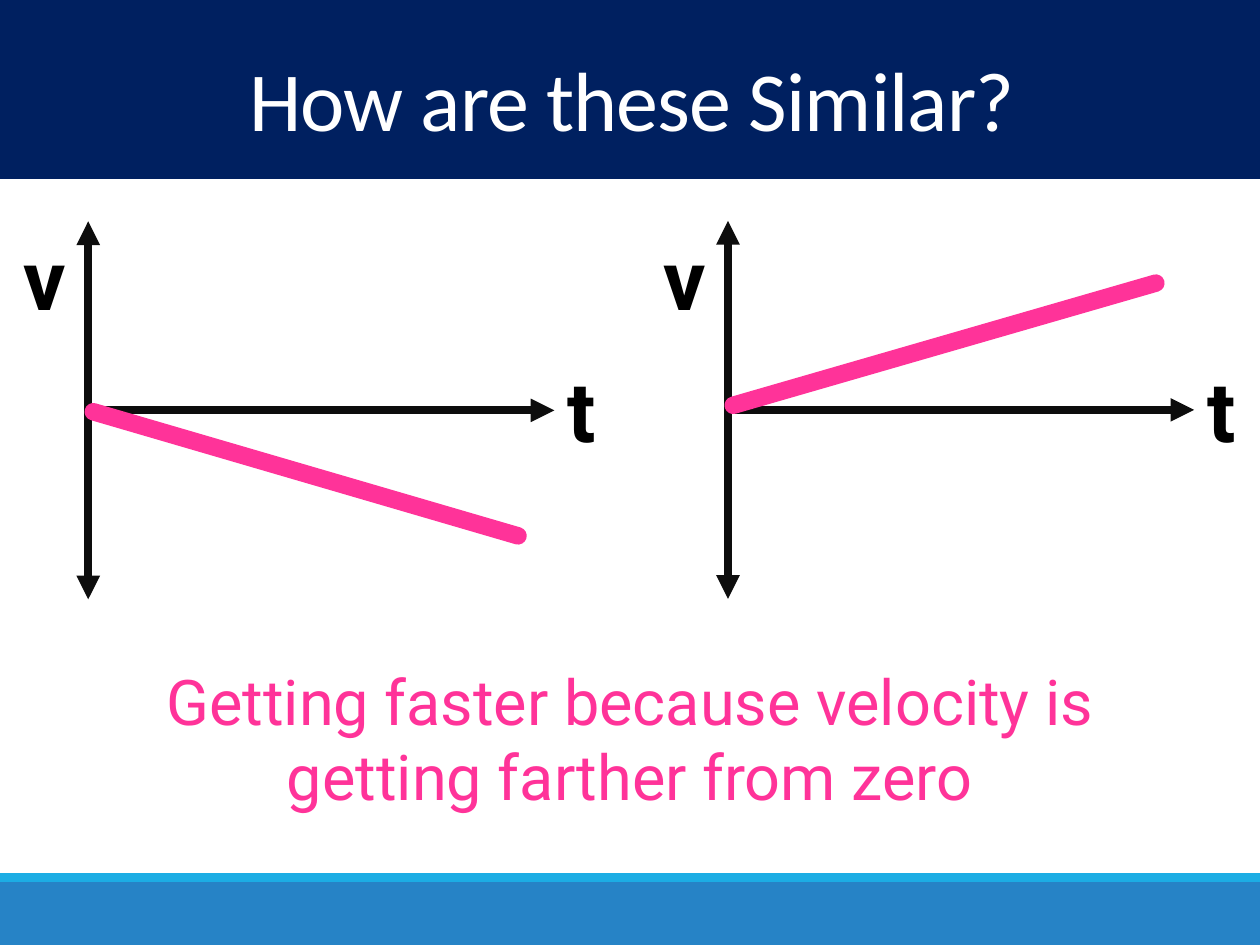
from dataclasses import dataclass

from lxml.etree import SubElement
from pptx import Presentation
from pptx.dml.color import RGBColor
from pptx.enum.shapes import MSO_CONNECTOR, MSO_SHAPE
from pptx.enum.text import MSO_ANCHOR, MSO_AUTO_SIZE, PP_ALIGN
from pptx.oxml.ns import qn
from pptx.util import Pt


@dataclass(frozen=True)
class Theme:
    navy: str = "002060"
    blue: str = "2683C6"
    cyan: str = "1CADE4"
    white: str = "FFFFFF"
    black: str = "000000"
    axis: str = "0D0D0D"
    pink: str = "FF3399"
    title_font: str = "Calibri"
    body_font: str = "Roboto"
    large: int = 48
    medium: int = 36
    axis_width: float = 4.5
    graph_width: float = 10


class SlideBuilder:
    def __init__(self, page, theme):
        self.page = page
        self.theme = theme

    def band(self, top, height, color):
        shape = self.page.shapes.add_shape(
            MSO_SHAPE.RECTANGLE, 0, Pt(top), Pt(720), Pt(height))
        shape.shadow.inherit = False
        shape.fill.solid()
        shape.fill.fore_color.rgb = RGBColor.from_string(color)
        shape.line.fill.background()
        return shape

    def style(self, para, font, size, color, bold=False):
        for span in para.runs:
            span.font.name = font
            span.font.size = Pt(size)
            span.font.bold = bold
            span.font.color.rgb = RGBColor.from_string(color)

    def title(self, text, banner):
        """Fill the title placeholder and lift it in front of its banner."""
        box = self.page.shapes.title
        box.left, box.top, box.width, box.height = Pt(2), Pt(30), Pt(718), Pt(60.5)
        frame = box.text_frame
        frame.text = text
        frame.auto_size = MSO_AUTO_SIZE.NONE
        frame.vertical_anchor = MSO_ANCHOR.MIDDLE
        para = frame.paragraphs[0]
        para.alignment = PP_ALIGN.CENTER
        para.line_spacing = 0.85
        self.style(para, self.theme.title_font, self.theme.large, self.theme.white)
        for span in para.runs:
            span.font._element.set("spc", "-50")
        banner.element.addnext(box.element)

    def text(self, text, left, top, width, height, size, color,
             bold=False, wrap=False, align=PP_ALIGN.LEFT):
        box = self.page.shapes.add_textbox(Pt(left), Pt(top), Pt(width), Pt(height))
        frame = box.text_frame
        frame.text = text
        frame.word_wrap = wrap
        frame.auto_size = MSO_AUTO_SIZE.SHAPE_TO_FIT_TEXT
        para = frame.paragraphs[0]
        para.alignment = align
        self.style(para, self.theme.body_font, size, color, bold)

    def line(self, start, end, color, width, arrows=(), cap="flat"):
        """Draw a line; arrows names the ends ("headEnd", "tailEnd") that get one."""
        connector = self.page.shapes.add_connector(
            MSO_CONNECTOR.STRAIGHT, *map(Pt, (*start, *end)))
        connector.line.color.rgb = RGBColor.from_string(color)
        connector.line.width = Pt(width)
        outline = connector.line._ln
        outline.set("cap", cap)
        SubElement(outline, qn("a:round"))
        for arrow in arrows:
            SubElement(outline, qn(f"a:{arrow}"), type="triangle")
        SubElement(connector.element.spPr, qn("a:effectLst"))

    def velocity_graph(self, left, middle, graph_start, graph_end):
        """Draw v-t axes with origin (left, middle) and one graph line."""
        theme = self.theme
        self.line((left, middle - 108), (left, middle + 108), theme.axis,
                  theme.axis_width, ("headEnd", "tailEnd"))
        self.line((left, middle), (left + 266.4, middle), theme.axis,
                  theme.axis_width, ("tailEnd",))
        self.text("v", left - 44, 126, 41, 65.5, theme.large, theme.black, bold=True)
        self.text("t", left + 266.8, 201.6, 33, 65.5, theme.large, theme.black, bold=True)
        self.line(graph_start, graph_end, theme.pink, theme.graph_width, cap="rnd")


def main():
    deck = Presentation()
    deck.slide_width, deck.slide_height = Pt(720), Pt(540)
    theme = Theme()
    builder = SlideBuilder(deck.slides.add_slide(deck.slide_layouts[5]), theme)

    builder.band(504, 36, theme.blue)
    builder.band(499, 5, theme.cyan)
    banner = builder.band(0, 102.2, theme.navy)
    builder.title("How are these Similar?", banner)

    builder.velocity_graph(50.4, 234.5, (53.3, 235.3), (296, 306.2))
    builder.velocity_graph(416, 234.2, (419, 231.6), (660.5, 161.8))

    builder.text("Getting faster because velocity is getting farther from zero",
                 38, 375, 644, 94.5, theme.medium, theme.pink,
                 wrap=True, align=PP_ALIGN.CENTER)
    deck.save("out.pptx")


if __name__ == "__main__":
    main()
